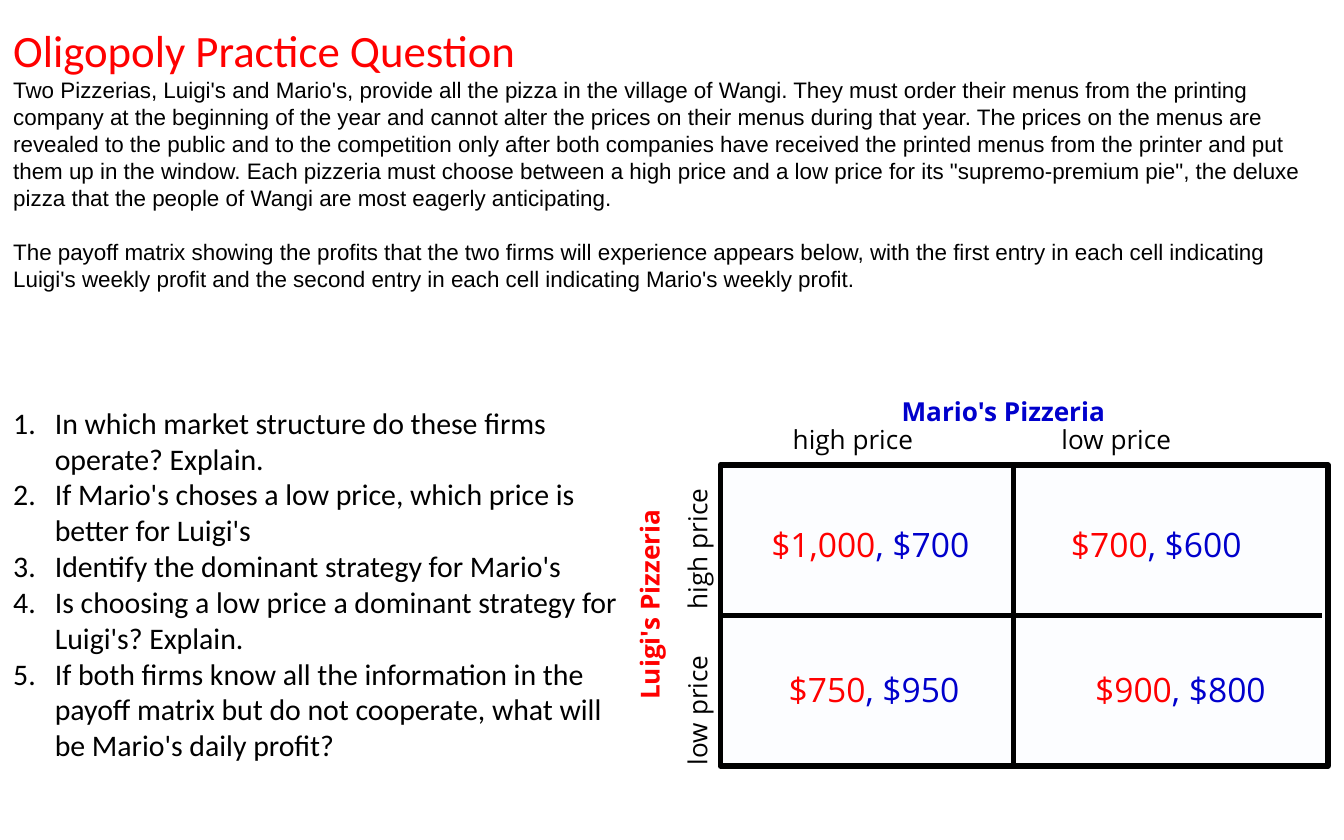
from dataclasses import dataclass

from lxml import etree
from pptx import Presentation
from pptx import util as u
from pptx.dml.color import RGBColor
from pptx.enum import shapes, text
from pptx.oxml.ns import qn

PX = 9144  # EMU in one px, 100 px to the inch
COLORS = {"black": "000000", "red": "FF0000", "blue": "0000CC", "cell": "FCFDFF"}
BODY_PITCH = 14.4


@dataclass(frozen=True)
class Box:
    x: int
    y: int
    w: int
    h: int
    rotation: int = 0


@dataclass(frozen=True)
class Payoff:
    box: Box
    luigi: str
    mario: str


@dataclass(frozen=True)
class Label:
    box: Box
    text: str
    color: str = "black"
    bold: bool = False
    tab: int = 0


TITLE = "Oligopoly Practice Question"
STORY = [
    "Two Pizzerias, Luigi's and Mario's, provide all the pizza in the village of Wangi. "
    "They must order their menus from the printing company at the beginning of the year "
    "and cannot alter the prices on their menus during that year. The prices on the menus "
    "are revealed to the public and to the competition only after both companies have "
    "received the printed menus from the printer and put them up in the window. Each "
    "pizzeria must choose between a high price and a low price for its "
    "\"supremo-premium pie\", the deluxe pizza that the people of Wangi are most eagerly "
    "anticipating.",
    "The payoff matrix showing the profits that the two firms will experience appears "
    "below, with the first entry in each cell indicating Luigi's weekly profit and the "
    "second entry in each cell indicating Mario's weekly profit.",
]
QUESTIONS = [
    "In which market structure do these firms operate? Explain.",
    "If Mario's choses a low price, which price is better for Luigi's",
    "Identify the dominant strategy for Mario's",
    "Is choosing a low price a dominant strategy for Luigi's? Explain.",
    "If both firms know all the information in the payoff matrix but do not cooperate, "
    "what will be Mario's daily profit?",
]
MATRIX = Box(536, 346, 452, 224)
DIVIDERS = [(754, 345, 754, 568), (535, 458, 984, 458)]
PAYOFFS = [
    Payoff(Box(564, 385, 192, 40), "$1,000", "$700"),
    Payoff(Box(787, 385, 172, 40), "$700", "$600"),
    Payoff(Box(577, 493, 172, 40), "$750", "$950"),
    Payoff(Box(805, 493, 172, 40), "$900", "$800"),
]
LABELS = [
    Label(Box(580, 310, 380, 34), "high price\tlow price", tab=200),
    Label(Box(393, 436, 252, 34, 270), "low price\thigh price", tab=116),
    Label(Box(661, 289, 224, 34), "Mario's Pizzeria", "blue", True),
    Label(Box(394, 424, 179, 34, 270), "Luigi's Pizzeria", "red", True),
]


def rgb(name: str) -> RGBColor:
    return RGBColor.from_string(COLORS[name])


def add_box(s, box: Box):
    """Add an empty wrapping text box and return its text frame."""
    sp = s.shapes.add_textbox(box.x * PX, box.y * PX, box.w * PX, box.h * PX)
    sp.rotation = box.rotation
    tf = sp.text_frame
    tf.word_wrap = True
    tf.vertical_anchor = text.MSO_ANCHOR.TOP
    return tf


def add_run(p, words: str, *, size: int, font: str, color: str = "black",
            bold: bool = False) -> None:
    r = p.add_run()
    r.text = words
    r.font.size = u.Pt(size)
    r.font.name = font
    r.font.bold = bold
    r.font.color.rgb = rgb(color)


def number(p, indent: int) -> None:
    """Number a paragraph with a hanging indent."""
    pPr = p._p.get_or_add_pPr()
    pPr.set("marL", str(indent * PX))
    pPr.set("indent", str(-indent * PX))
    etree.SubElement(pPr, qn("a:buFont"), typeface="+mj-lt")
    etree.SubElement(pPr, qn("a:buAutoNum"), type="arabicPeriod")


def add_tab_stop(p, position: int) -> None:
    tabs = etree.SubElement(p._p.get_or_add_pPr(), qn("a:tabLst"))
    etree.SubElement(tabs, qn("a:tab"), pos=str(position * PX), algn="l")


def add_story(s) -> None:
    tf = add_box(s, Box(0, 12, 1000, 252))
    add_run(tf.paragraphs[0], TITLE, size=24, font="Calibri", color="red")
    for i, words in enumerate(STORY):
        p = tf.add_paragraph()
        p.line_spacing = u.Pt(BODY_PITCH)
        p.space_before = u.Pt(BODY_PITCH * i)
        add_run(p, words, size=12, font="Arial")


def add_questions(s) -> None:
    tf = add_box(s, Box(0, 296, 473, 279))
    for i, words in enumerate(QUESTIONS):
        p = tf.add_paragraph() if i else tf.paragraphs[0]
        number(p, 31)
        add_run(p, words, size=16, font="Calibri")


def style_line(line) -> None:
    line.color.rgb = rgb("black")
    line.width = u.Pt(3)


def add_matrix(s) -> None:
    sp = s.shapes.add_shape(shapes.MSO_SHAPE.RECTANGLE, MATRIX.x * PX, MATRIX.y * PX,
                            MATRIX.w * PX, MATRIX.h * PX)
    sp.shadow.inherit = False
    sp.fill.solid()
    sp.fill.fore_color.rgb = rgb("cell")
    style_line(sp.line)
    for ends in DIVIDERS:
        divider = s.shapes.add_connector(shapes.MSO_CONNECTOR.STRAIGHT,
                                         *(end * PX for end in ends))
        etree.SubElement(divider._element.spPr, qn("a:effectLst"))
        style_line(divider.line)


def add_payoff(s, payoff: Payoff) -> None:
    p = add_box(s, payoff.box).paragraphs[0]
    add_run(p, payoff.luigi, size=18, font="Open Sans", color="red")
    add_run(p, f", {payoff.mario}", size=18, font="Open Sans", color="blue")


def add_label(s, label: Label) -> None:
    p = add_box(s, label.box).paragraphs[0]
    if label.tab:
        add_tab_stop(p, label.tab)
    add_run(p, label.text, size=14, font="Open Sans", color=label.color, bold=label.bold)


def main() -> None:
    prs = Presentation()
    prs.slide_width, prs.slide_height = 1000 * PX, 625 * PX
    s = prs.slides.add_slide(prs.slide_layouts[6])
    add_story(s)
    add_questions(s)
    add_matrix(s)
    for payoff in PAYOFFS:
        add_payoff(s, payoff)
    for label in LABELS:
        add_label(s, label)
    prs.save("out.pptx")


if __name__ == "__main__":
    main()
